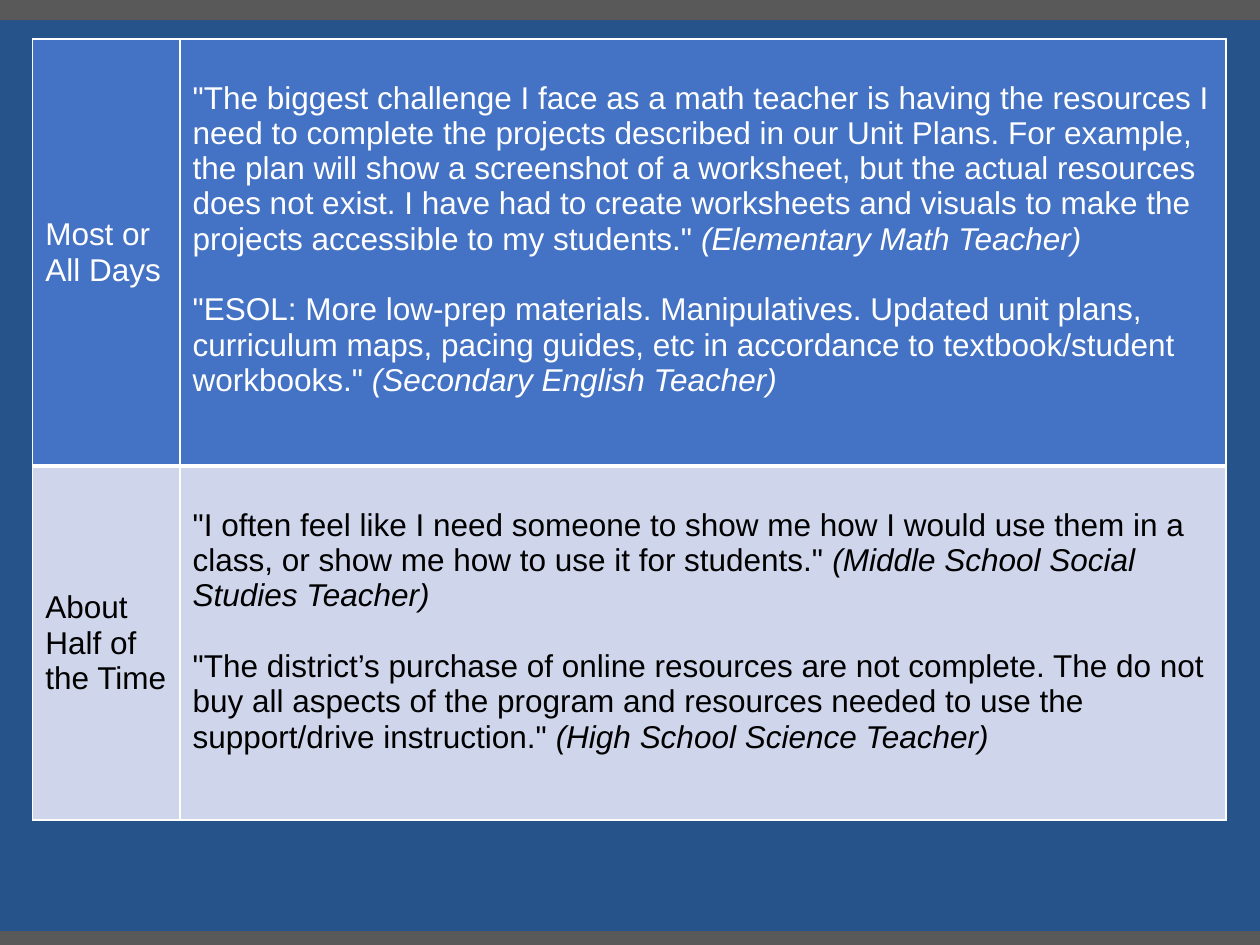
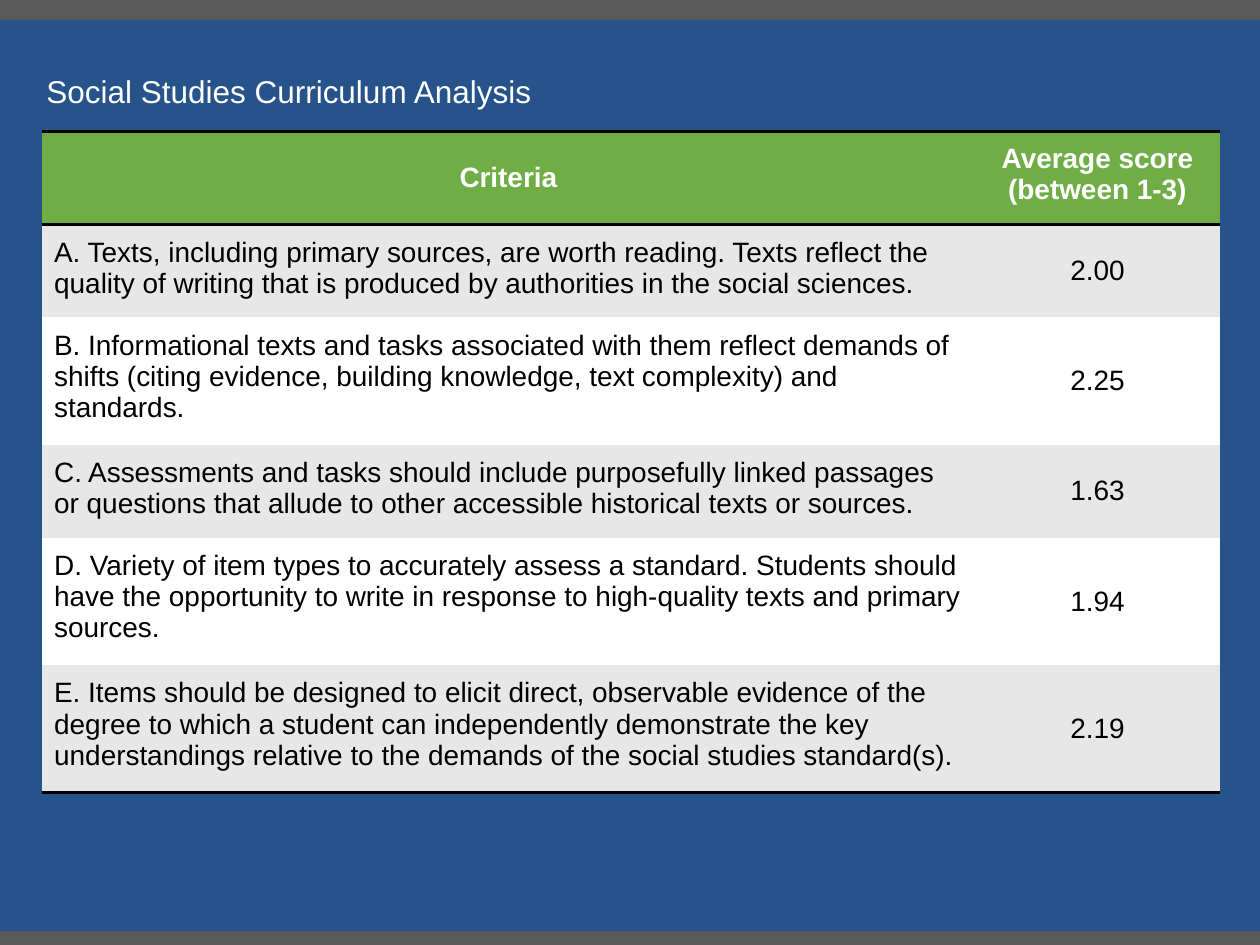
from dataclasses import dataclass

from lxml import etree
from pptx import Presentation
from pptx.dml.color import RGBColor
from pptx.enum.shapes import MSO_SHAPE
from pptx.enum.text import MSO_ANCHOR, PP_ALIGN
from pptx.oxml.ns import qn
from pptx.slide import Slide
from pptx.table import Table, _Cell
from pptx.util import Inches, Pt

RECT = MSO_SHAPE.RECTANGLE
TOP, MIDDLE = MSO_ANCHOR.TOP, MSO_ANCHOR.MIDDLE
LEFT, CENTER = PP_ALIGN.LEFT, PP_ALIGN.CENTER

FONT = "Arial"
NAVY, GRAY, BLUE, PALE = "26538A", "595959", "4472C4", "CFD5EA"
GREEN, SILVER, WHITE, BLACK = "70AD47", "E7E7E7", "FFFFFF", "000000"
BAND = 0.16


@dataclass
class Quote:
    text: str
    who: str = ""


@dataclass
class Look:
    fill: str
    ink: str
    size: int
    bold: bool = False
    align: PP_ALIGN = LEFT
    anchor: MSO_ANCHOR = MIDDLE
    inset: float = 0.05
    head: float = 0.05
    gap: float = 0


@dataclass
class Rule:
    """Border widths in points; rows holds one width per horizontal edge."""
    color: str
    side: float
    rows: list[float]


QUOTES = [
    ("Most or All Days", [
        Quote('"The biggest challenge I face as a math teacher is having the resources I need to '
              'complete the projects described in our Unit Plans. For example, the plan will show '
              'a screenshot of a worksheet, but the actual resources does not exist. I have had to '
              'create worksheets and visuals to make the projects accessible to my students."',
              " (Elementary Math Teacher)"),
        Quote('"ESOL: More low-prep materials. Manipulatives. Updated unit plans, curriculum maps, '
              'pacing guides, etc in accordance to textbook/student workbooks."',
              " (Secondary English Teacher)"),
    ]),
    ("About Half of the Time", [
        Quote('"I often feel like I need someone to show me how I would use them in a class, or '
              'show me how to use it for students."',
              " (Middle School Social Studies Teacher)"),
        Quote('"The district’s purchase of online resources are not complete. The do not buy all '
              'aspects of the program and resources needed to use the support/drive instruction."',
              " (High School Science Teacher)"),
    ]),
]

SCORES = [
    ("A. Texts, including primary sources, are worth reading. Texts reflect the quality of "
     "writing that is produced by authorities in the social sciences.", "2.00"),
    ("B. Informational texts and tasks associated with them reflect demands of shifts (citing "
     "evidence, building knowledge, text complexity) and standards.", "2.25"),
    ("C. Assessments and tasks should include purposefully linked passages or questions that "
     "allude to other accessible historical texts or sources.", "1.63"),
    ("D. Variety of item types to accurately assess a standard. Students should have the "
     "opportunity to write in response to high-quality texts and primary sources.", "1.94"),
    ("E. Items should be designed to elicit direct, observable evidence of the degree to which "
     "a student can independently demonstrate the key understandings relative to the demands "
     "of the social studies standard(s).", "2.19"),
]


def rgb(code: str) -> RGBColor:
    return RGBColor.from_string(code)


def add_page(deck: Presentation) -> Slide:
    """Add a slide with the shared background and edge bands."""
    page = deck.slides.add_slide(deck.slide_layouts[6])
    page.background.fill.solid()
    page.background.fill.fore_color.rgb = rgb(NAVY)
    for top in (7.39, 0):
        band = page.shapes.add_shape(RECT, 0, Inches(top), Inches(10), Inches(BAND))
        band.shadow.inherit = False
        band.fill.solid()
        band.fill.fore_color.rgb = rgb(GRAY)
        band.line.fill.background()
    return page


def add_table(page: Slide, left: float, top: float,
              cols: list[float], rows: list[float]) -> Table:
    table = page.shapes.add_table(len(rows), len(cols), Inches(left), Inches(top),
                                  Inches(sum(cols)), Inches(sum(rows))).table
    for col, width in zip(table.columns, cols):
        col.width = Inches(width)
    for row, height in zip(table.rows, rows):
        row.height = Inches(height)
    return table


def draw_rules(table: Table, rule: Rule) -> None:
    """Border every cell; call this before any cell is filled."""
    for i, row in enumerate(table.rows):
        edges = {"L": rule.side, "R": rule.side, "T": rule.rows[i], "B": rule.rows[i + 1]}
        for cell in row.cells:
            props = cell._tc.get_or_add_tcPr()
            for side, width in edges.items():
                line = etree.SubElement(props, qn(f"a:ln{side}"), w=str(Pt(width)))
                if width:
                    fill = etree.SubElement(line, qn("a:solidFill"))
                    etree.SubElement(fill, qn("a:srgbClr"), val=rule.color)
                else:
                    etree.SubElement(line, qn("a:noFill"))


def fill_cell(cell: _Cell, quotes: list[Quote], look: Look) -> None:
    cell.fill.solid()
    cell.fill.fore_color.rgb = rgb(look.fill)
    cell.vertical_anchor = look.anchor
    cell.margin_left = cell.margin_right = Inches(0.1)
    cell.margin_top, cell.margin_bottom = Inches(look.head), Inches(look.inset)
    frame = cell.text_frame
    for i, quote in enumerate(quotes):
        para = frame.add_paragraph() if i else frame.paragraphs[0]
        para.text = quote.text
        para.alignment = look.align
        if i:
            para.space_before = Pt(look.gap)
        if quote.who:
            para.add_run().text = quote.who
        for j, run in enumerate(para.runs):
            font = run.font
            font.name, font.size, font.bold = FONT, Pt(look.size), look.bold
            font.italic = j > 0
            font.color.rgb = rgb(look.ink)


def add_quotes(deck: Presentation) -> None:
    page = add_page(deck)
    table = add_table(page, 0.26, 0.31, [1.17, 8.3], [3.39, 2.81])
    draw_rules(table, Rule(WHITE, 1, [1, 3, 1]))
    tones = [(BLUE, WHITE), (PALE, BLACK)]
    for i, ((label, quotes), (fill, ink)) in enumerate(zip(QUOTES, tones)):
        fill_cell(table.cell(i, 0), [Quote(label)], Look(fill, ink, 18))
        fill_cell(table.cell(i, 1), quotes,
                  Look(fill, ink, 18, anchor=TOP, head=0.33, gap=20.2))


def add_scores(deck: Presentation) -> None:
    page = add_page(deck)
    title = page.shapes.add_textbox(Inches(0.27), Inches(0.52), Inches(7.77), Inches(0.4))
    title.text_frame.word_wrap = True
    title.text_frame.text = "Social Studies Curriculum Analysis"
    font = title.text_frame.paragraphs[0].runs[0].font
    font.name, font.size, font.color.rgb = FONT, Pt(18), rgb(WHITE)

    low, tall = 0.74, 1.01
    table = add_table(page, 0.33, 1.04, [7.41, 1.94], [low, low, tall, low, tall, tall])
    draw_rules(table, Rule(BLACK, 0, [2, 2, 0, 0, 0, 0, 2]))
    pad = {"inset": 0.1, "head": 0.1}
    fill_cell(table.cell(0, 0), [Quote("Criteria")],
              Look(GREEN, WHITE, 16, True, CENTER, **pad))
    fill_cell(table.cell(0, 1), [Quote("Average score"), Quote("(between 1-3)")],
              Look(GREEN, WHITE, 16, True, CENTER, TOP, **pad))
    for i, (text, score) in enumerate(SCORES, 1):
        fill = SILVER if i % 2 else WHITE
        fill_cell(table.cell(i, 0), [Quote(text)], Look(fill, BLACK, 16, anchor=TOP, **pad))
        fill_cell(table.cell(i, 1), [Quote(score)], Look(fill, BLACK, 16, align=CENTER, **pad))


def main() -> None:
    deck = Presentation()
    deck.slide_width, deck.slide_height = Inches(10), Inches(7.5)
    add_quotes(deck)
    add_scores(deck)
    deck.save("out.pptx")


if __name__ == "__main__":
    main()
